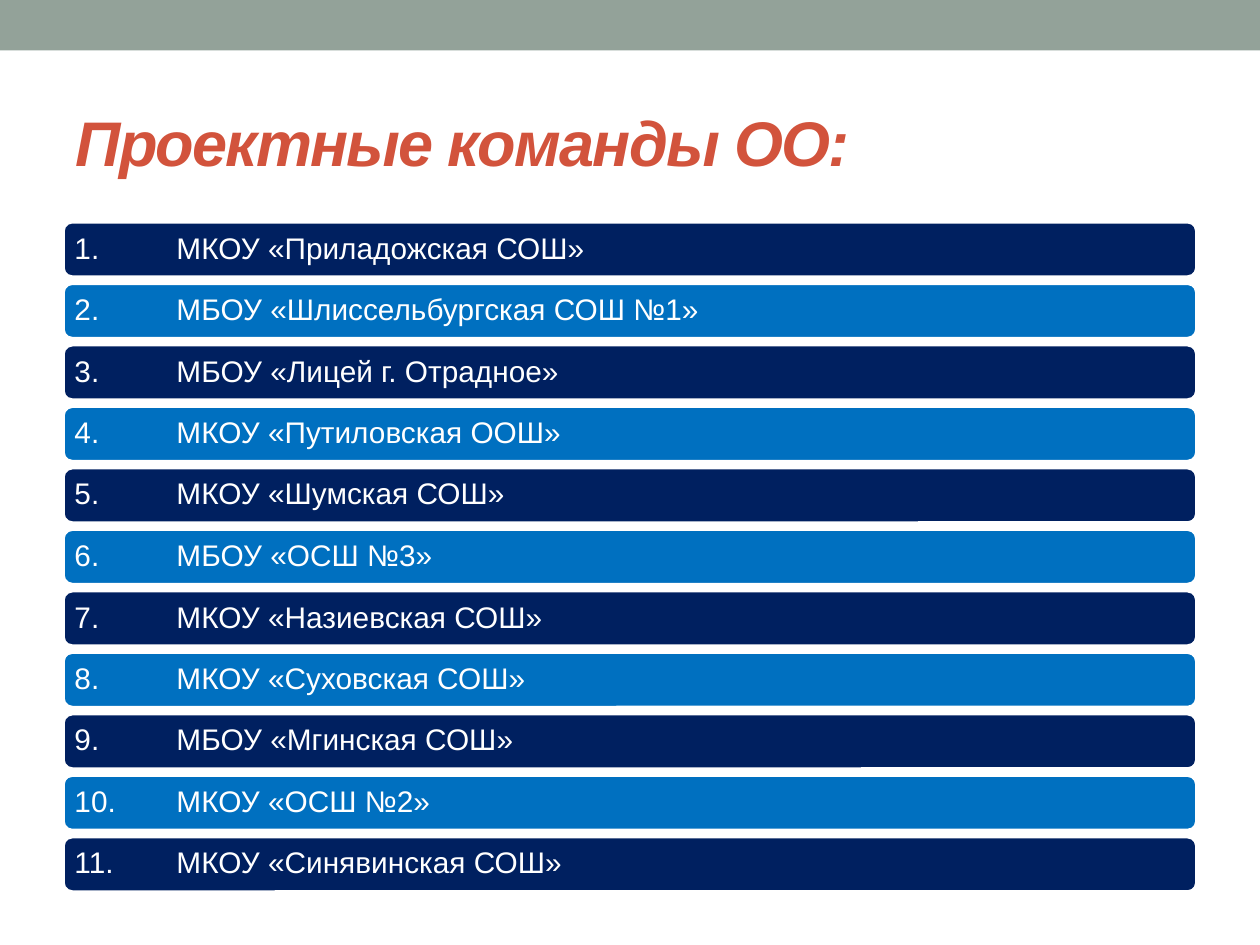
from lxml.etree import SubElement
from pptx import Presentation
from pptx.dml.color import RGBColor
from pptx.enum.shapes import MSO_SHAPE
from pptx.enum.text import MSO_ANCHOR, PP_ALIGN
from pptx.oxml.ns import qn
from pptx.util import Inches, Pt

FONT = "Arial"
SAGE = RGBColor(0x93, 0xA2, 0x99)
RED = RGBColor(0xD2, 0x53, 0x3C)
NAVY = RGBColor(0x00, 0x20, 0x60)
BLUE = RGBColor(0x00, 0x70, 0xC0)
WHITE = RGBColor(0xFF, 0xFF, 0xFF)

SCHOOLS = [
    "МКОУ «Приладожская СОШ»",
    "МБОУ «Шлиссельбургская СОШ №1»",
    "МБОУ «Лицей г. Отрадное»",
    "МКОУ «Путиловская ООШ»",
    "МКОУ «Шумская СОШ»",
    "МБОУ «ОСШ №3»",
    "МКОУ «Назиевская СОШ»",
    "МКОУ «Суховская СОШ»",
    "МБОУ «Мгинская СОШ»",
    "МКОУ «ОСШ №2»",
    "МКОУ «Синявинская СОШ»",
]


def add_span(para, text, size, color):
    span = para.add_run()
    span.text = text
    span.font.name = FONT
    span.font.size = Pt(size)
    span.font.color.rgb = color
    return span


def add_box(page, kind, left, top, width, height, fill):
    box = page.shapes.add_shape(kind, left, top, width, height)
    box.shadow.inherit = False
    box.fill.solid()
    box.fill.fore_color.rgb = fill
    box.line.fill.background()
    return box


def add_title(page, left, top, width, height):
    title = page.shapes.title
    title.left, title.top, title.width, title.height = left, top, width, height
    frame = title.text_frame
    frame.word_wrap = True
    frame.vertical_anchor = MSO_ANCHOR.MIDDLE
    para = frame.paragraphs[0]
    para.alignment = PP_ALIGN.LEFT
    span = add_span(para, "Проектные команды ОО:", 36, RED)
    span.font.bold = True
    span.font.italic = True
    # Letter spacing of -1 pt
    span.font._element.set("spc", "-100")


def add_bar(page, left, top, width, height, fill, text):
    bar = add_box(page, MSO_SHAPE.ROUNDED_RECTANGLE, left, top, width, height, fill)
    bar.line.color.rgb = WHITE
    bar.line.width = Pt(2.08)
    frame = bar.text_frame
    frame.word_wrap = True
    frame.vertical_anchor = MSO_ANCHOR.MIDDLE
    frame.margin_left = frame.margin_right = Inches(0.07)
    frame.margin_top = frame.margin_bottom = Inches(0.05)
    para = frame.paragraphs[0]
    # Tab stop between the number and the name
    tabs = SubElement(para._p.get_or_add_pPr(), qn("a:tabLst"))
    SubElement(tabs, qn("a:tab"), pos=str(Inches(0.81)), algn="l")
    para.alignment = PP_ALIGN.LEFT
    para.line_spacing = 0.9
    add_span(para, text, 17, WHITE)


def add_school_list(page, left, top, width, height):
    bar_height = Inches(0.44)
    step = (height - bar_height) / (len(SCHOOLS) - 1)
    for index, school in enumerate(SCHOOLS):
        fill = BLUE if index % 2 else NAVY
        add_bar(page, left, int(top + index * step), width, bar_height,
                fill, f"{index + 1}.\t{school}")


def main():
    deck = Presentation()
    deck.slide_width, deck.slide_height = Inches(10), Inches(7.5)
    page = deck.slides.add_slide(deck.slide_layouts[5])
    page.background.fill.solid()
    page.background.fill.fore_color.rgb = WHITE

    # Top band
    add_box(page, MSO_SHAPE.RECTANGLE, 0, 0, deck.slide_width, Inches(0.4), SAGE)
    # Heading and numbered bars
    add_title(page, Inches(0.5), Inches(0.58), Inches(9), Inches(1.08))
    add_school_list(page, Inches(0.5), Inches(1.76), Inches(9), Inches(5.32))
    deck.save("out.pptx")


if __name__ == "__main__":
    main()
